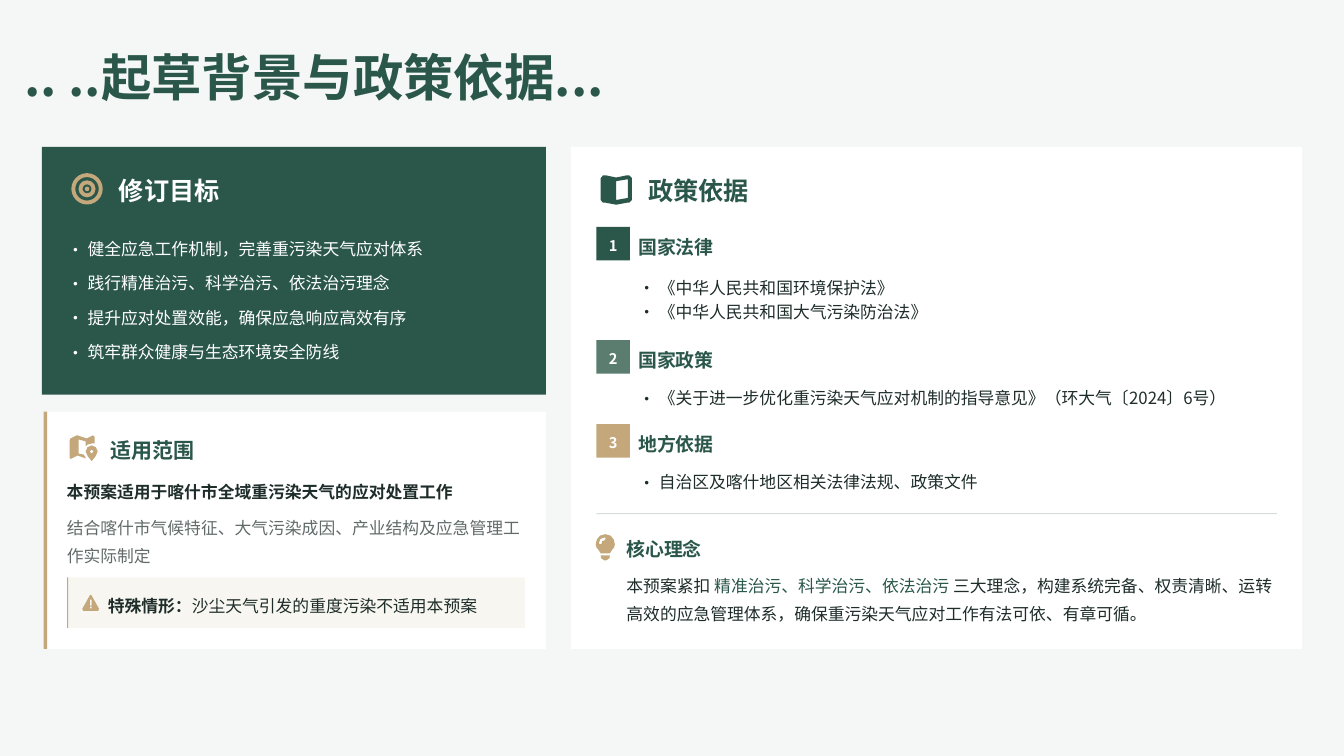
from lxml.etree import SubElement
from pptx import Presentation
from pptx.dml.color import RGBColor
from pptx.enum.shapes import MSO_CONNECTOR, MSO_SHAPE
from pptx.enum.text import MSO_ANCHOR, PP_ALIGN
from pptx.oxml.ns import qn
from pptx.util import Pt

GREEN = RGBColor(0x2A, 0x57, 0x4A)
SAGE = RGBColor(0x5A, 0x7D, 0x6F)
GOLD = RGBColor(0xC4, 0xA8, 0x7C)
INK = RGBColor(0x1E, 0x2D, 0x2A)
WHITE = RGBColor(0xFF, 0xFF, 0xFF)
MIST = RGBColor(0xF4, 0xF7, 0xF5)
FONT = "Noto Sans CJK SC"
HEADING_FONT = "Lato"

deck = Presentation()
deck.slide_width, deck.slide_height = Pt(960), Pt(540)
slide = deck.slides.add_slide(deck.slide_layouts[6])
slide.background.fill.solid()
slide.background.fill.fore_color.rgb = MIST


def add_text(paragraphs, left, top, width, height, size=12, color=INK, bold=False,
             font=FONT, spacing=1.4, after=0, align=PP_ALIGN.LEFT, bullet=False, alpha=100):
    """Each paragraph is a list of (text, overrides) runs; a plain string is one paragraph."""
    frame = slide.shapes.add_textbox(Pt(left), Pt(top), Pt(width), Pt(height)).text_frame
    frame.word_wrap = True
    frame.vertical_anchor = MSO_ANCHOR.MIDDLE
    frame.margin_left = frame.margin_right = frame.margin_top = frame.margin_bottom = 0
    if isinstance(paragraphs, str):
        paragraphs = [[(paragraphs, {})]]
    for index, runs in enumerate(paragraphs):
        paragraph = frame.add_paragraph() if index else frame.paragraphs[0]
        paragraph.alignment = align
        paragraph.line_spacing = spacing
        if index < len(paragraphs) - 1:
            paragraph.space_after = Pt(after)
        if bullet:
            properties = paragraph._p.get_or_add_pPr()
            properties.set("marL", str(Pt(14.6)))
            properties.set("indent", str(-Pt(14.6)))
            SubElement(properties, qn("a:buFont")).set("typeface", FONT)
            SubElement(properties, qn("a:buChar")).set("char", "•")
        for text, overrides in runs:
            run = paragraph.add_run()
            run.text = text
            run.font.size = Pt(size)
            run.font.name = font
            run.font.bold = overrides.get("bold", bold)
            run.font.color.rgb = overrides.get("color", color)
            SubElement(run._r.rPr, qn("a:ea")).set("typeface", FONT)
            if alpha < 100:
                tint = run._r.find(".//" + qn("a:srgbClr"))
                SubElement(tint, qn("a:alpha")).set("val", str(alpha * 1000))


def add_filled(kind, left, top, width, height, color, alpha=100):
    shape = slide.shapes.add_shape(kind, Pt(left), Pt(top), Pt(width), Pt(height))
    shape.shadow.inherit = False
    shape.line.fill.background()
    shape.fill.solid()
    shape.fill.fore_color.rgb = color
    if alpha < 100:
        tint = shape._element.spPr.find(".//" + qn("a:srgbClr"))
        SubElement(tint, qn("a:alpha")).set("val", str(alpha * 1000))
    return shape


add_text(".. ..起草背景与政策依据...", 17.3, 29.5, 931, 57.6, size=36, color=GREEN,
         bold=True, spacing=0.8)

# Panels, accent bars and the callout
for left, top, width, height, color, alpha in [
    (30, 105, 360, 177, GREEN, 100),
    (31.2, 294, 358.8, 169.5, WHITE, 100),
    (31.2, 294, 2.4, 169.5, GOLD, 100),
    (48, 412.5, 327, 36, GOLD, 10),
    (48, 412.5, 0.75, 36, GOLD, 100),
    (408, 105, 522, 358.5, WHITE, 100),
]:
    add_filled(MSO_SHAPE.RECTANGLE, left, top, width, height, color, alpha)

# Revision goals
target_x, target_y = 62.2, 134.9
for diameter, thickness in [(22.4, 0.125), (12.2, 0.235)]:
    ring = add_filled(MSO_SHAPE.DONUT, target_x - diameter / 2, target_y - diameter / 2,
                      diameter, diameter, GOLD)
    ring.adjustments[0] = thickness
add_filled(MSO_SHAPE.OVAL, target_x - 1.6, target_y - 1.6, 3.2, 3.2, GOLD)
add_text("修订目标", 85, 123, 86, 24, size=18, color=WHITE, bold=True, spacing=1.1)
goals = ["健全应急工作机制，完善重污染天气应对体系", "践行精准治污、科学治污、依法治污理念",
         "提升应对处置效能，确保应急响应高效有序", "筑牢群众健康与生态环境安全防线"]
add_text([[(goal, {})] for goal in goals], 48, 159, 330, 105.4, color=WHITE,
         after=4.3, bullet=True)

# Scope
add_text("适用范围", 79, 309, 71, 21, size=15, color=GREEN, bold=True, spacing=1.2)
add_text("本预案适用于喀什市全域重污染天气的应对处置工作", 47.7, 340.5, 282, 16, bold=True)
add_text("结合喀什市气候特征、大气污染成因、产业结构及应急管理工作实际制定",
         47.7, 364.5, 334, 39, alpha=70)
add_text([[("特殊情形：", {"bold": True}), ("沙尘天气引发的重度污染不适用本预案", {})]],
         77, 421.5, 295, 18, spacing=1.3)

# Policy basis
add_text("政策依据", 463, 123, 86, 24, size=18, color=GREEN, bold=True, spacing=1.1)
bases = [
    ("国家法律", GREEN, ["《中华人民共和国环境保护法》", "《中华人民共和国大气污染防治法》"]),
    ("国家政策", SAGE, ["《关于进一步优化重污染天气应对机制的指导意见》（环大气〔2024〕6号）"]),
    ("地方依据", GOLD, ["自治区及喀什地区相关法律法规、政策文件"]),
]
row_top, item_pitch = 162, 20.9
for number, (heading, color, items) in enumerate(bases, 1):
    add_filled(MSO_SHAPE.RECTANGLE, 426, row_top, 24, 24, color)
    add_text(str(number), 423, row_top, 30, 24, size=10.5, color=WHITE, bold=True,
             spacing=1.2, align=PP_ALIGN.CENTER)
    add_text(heading, 456, row_top + 1.5, 64, 21, size=13.5, color=GREEN, bold=True,
             font=HEADING_FONT, spacing=1.3)
    add_text([[(item, {})] for item in items], 456, row_top + 31,
             462, item_pitch * len(items) - 3, spacing=1.2, bullet=True)
    row_top += 39.1 + item_pitch * len(items)

divider = slide.shapes.add_connector(MSO_CONNECTOR.STRAIGHT, Pt(426), Pt(366.9), Pt(912), Pt(366.9))
divider.line.width = Pt(0.75)
divider.line.color.rgb = GREEN
divider_tint = divider._element.spPr.find(".//" + qn("a:srgbClr"))
SubElement(divider_tint, qn("a:alpha")).set("val", "20000")
SubElement(divider._element.spPr, qn("a:effectLst"))

# Core idea
add_text("核心理念", 447.5, 379, 471, 21, size=13.5, color=GREEN, bold=True,
         font=HEADING_FONT, spacing=1.3)
add_text([[("本预案紧扣", {}), (" 精准治污、科学治污、依法治污 ", {"color": GREEN}),
           ("三大理念，构建系统完备、权责清晰、运转高效的应急管理体系，"
            "确保重污染天气应对工作有法可依、有章可循。", {})]], 447.5, 406, 470.5, 39)

# Icon outlines: origin, colour, then contours (inner ones are holes)
book = [
    [(0, 3.6), (1.8, 1.4), (3.6, 1.4), (11.2, 3), (18.8, 1.4), (20.5, 1.4), (22.4, 3.4),
     (22.4, 19), (20.5, 21), (18.8, 21), (11.2, 22.4), (3.6, 21), (1.8, 21), (0, 19)],
    [(11.2, 5.6), (19.6, 4.2), (19.6, 17.6), (11.2, 19)],
]
map_with_pin = [
    [(18, 2.2), (17.2, 0.8), (16.5, 0.8), (12.2, 2.9), (5.8, 0.7), (5, 0.7), (0.7, 2.9),
     (0, 4.3), (0, 16.5), (0.7, 17.5), (1.4, 17.3), (5.8, 15.1), (11.5, 17.2), (11.5, 16.5),
     (10.1, 14.4), (6.5, 13.7), (6.5, 3.6), (11.5, 5), (11.5, 8.6), (13, 7.2), (15.8, 6.5),
     (18, 6.5)],
    [(15.8, 7.9), (18.8, 9.2), (20.1, 12.2), (18.6, 15.6), (15.8, 19.1), (13, 15.6),
     (11.5, 12.2), (12.8, 9.2)],
    [(15.8, 10.8), (17.2, 12.2), (15.8, 13.6), (14.4, 12.2)],
]
warning = [
    [(6, 0), (6.7, 0.7), (12, 10.1), (11.4, 11.5), (0.6, 11.5), (0, 10.1), (5.3, 0.7)],
    [(5.4, 3.6), (6.6, 3.6), (6.6, 7.9), (5.4, 7.9)],
    [(5.4, 8.6), (6.6, 8.6), (6.6, 9.7), (5.4, 9.7)],
]
bulb = [
    [(10.1, 13.7), (11.5, 11.5), (13.2, 9.4), (13.7, 7.2), (12.9, 3.8), (10.6, 1), (6.9, 0),
     (3.1, 1), (0.8, 3.8), (0, 7.2), (0.5, 9.4), (2.2, 11.5), (3.6, 13.7)],
    [(10.1, 15.1), (3.6, 15.1), (3.8, 17), (6.1, 18.7), (7.6, 18.7), (9.9, 17)],
    [(6.5, 4.3), (4.6, 5), (4.2, 6.8), (3.2, 7.2), (2.2, 6.5), (3.4, 3.4), (6.5, 2.2), (7.2, 3.2)],
]
for left, top, color, contours in [
    (429, 123.8, GREEN, book),
    (49.7, 310.3, GOLD, map_with_pin),
    (58.8, 424.8, GOLD, warning),
    (425.5, 381.6, GOLD, bulb),
]:
    placed = [[(Pt(left + x), Pt(top + y)) for x, y in contour] for contour in contours]
    builder = slide.shapes.build_freeform(*placed[0][0], scale=1.0)
    for contour in placed:
        builder.move_to(*contour[0])
        builder.add_line_segments(contour[1:], close=True)
    icon = builder.convert_to_shape()
    icon.shadow.inherit = False
    icon.line.fill.background()
    icon.fill.solid()
    icon.fill.fore_color.rgb = color

deck.save("out.pptx")
